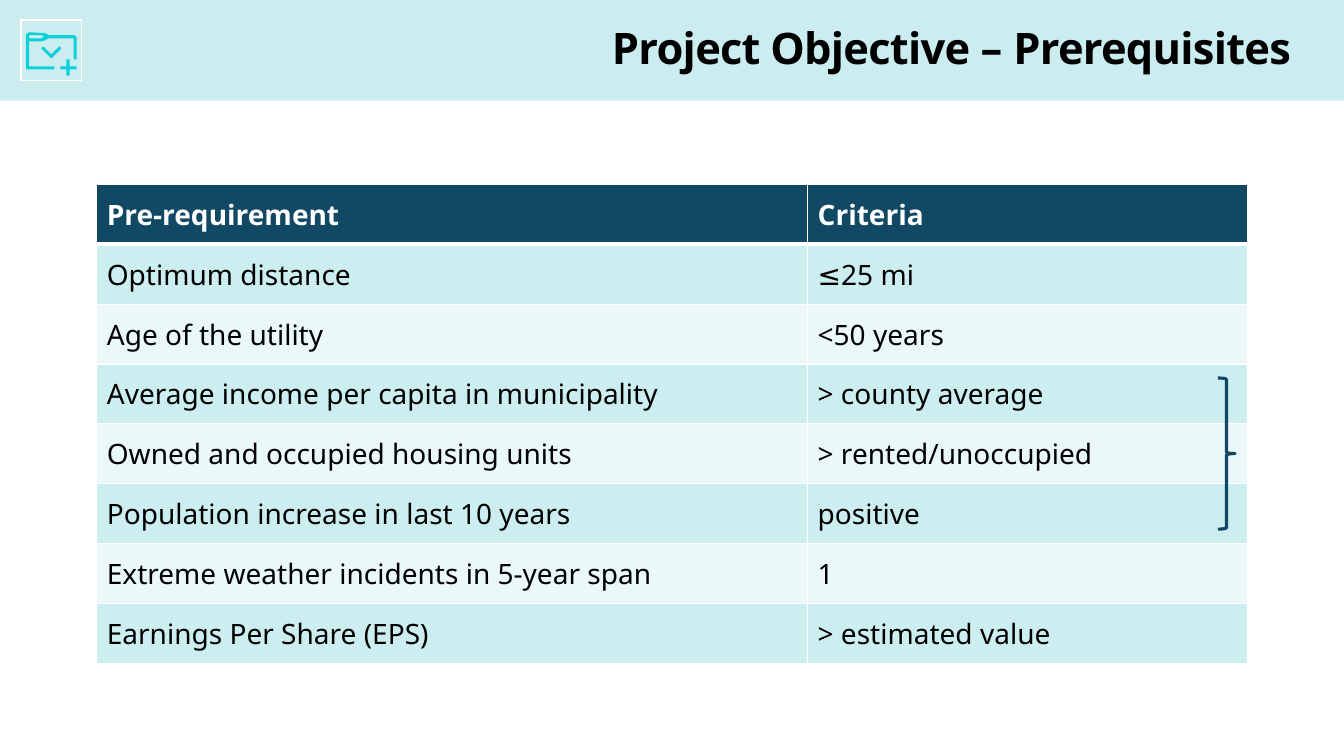
from dataclasses import dataclass

from lxml.etree import SubElement
from pptx import Presentation
from pptx.dml.color import RGBColor as RGB
from pptx.enum.shapes import MSO_SHAPE as SHAPE
from pptx.enum.text import MSO_ANCHOR as ANCHOR
from pptx.oxml.ns import qn
from pptx.util import Inches, Pt


@dataclass(frozen=True)
class Theme:
    font: str = "Noto Sans"
    band: str = "CCEDF0"
    icon: str = "0AD0D9"
    navy: str = "114864"
    row_dark: str = "CCEEF1"
    row_light: str = "EBF8F9"
    white: str = "FFFFFF"
    black: str = "000000"
    title_size: float = 31
    table_size: float = 20


THEME = Theme()

# Each title part has its own letter spacing, in hundredths of a point
TITLE = [("Project Objective ", -50), ("– ", -10), ("Prerequisites", -50)]

ROWS = [
    ("Pre-requirement", "Criteria"),
    ("Optimum distance", "≤25 mi"),
    ("Age of the utility", "<50 years"),
    ("Average income per capita in municipality", "> county average"),
    ("Owned and occupied housing units", "> rented/unoccupied"),
    ("Population increase in last 10 years", "positive"),
    ("Extreme weather incidents in 5-year span", "1"),
    ("Earnings Per Share (EPS)", "> estimated value"),
]
COLUMN_WIDTHS = (7.05, 4.36)

# Folder icon outlines, in hundredths of an inch
FOLDER = [(29, 32), (26, 34), (26, 69), (54, 69), (54, 66), (29, 66),
          (29, 41), (41, 41), (45, 40), (48, 38), (73, 38), (73, 59),
          (76, 59), (76, 37), (74, 35), (49, 35), (45, 33)]
TAB_HOLE = [(29, 35), (41, 35), (44, 36), (41, 38), (29, 38)]
CHEVRON = [(43, 46), (41, 48), (51, 58), (61, 48), (59, 46), (51, 54)]
PLUS = [(66, 59), (69, 59), (69, 66), (76, 66), (76, 69), (69, 69),
        (69, 75), (66, 75), (66, 69), (60, 69), (60, 66), (66, 66)]


def style_run(r, size, color, bold):
    values = {"name": THEME.font, "size": Pt(size), "bold": bold}
    for name, value in values.items():
        setattr(r.font, name, value)
    r.font.color.rgb = RGB.from_string(color)


def paint(sp, fill=None, line=None, width=1):
    sp.shadow.inherit = False
    if fill:
        sp.fill.solid()
        sp.fill.fore_color.rgb = RGB.from_string(fill)
    else:
        sp.fill.background()
    if line:
        sp.line.color.rgb = RGB.from_string(line)
        sp.line.width = Pt(width)
    else:
        sp.line.fill.background()


def add_preset(s, kind, box, **look):
    sp = s.shapes.add_shape(kind, *map(Inches, box))
    paint(sp, **look)


def add_outlines(s, outlines, **look):
    first, *others = outlines
    builder = s.shapes.build_freeform(*first[0], scale=Inches(0.01))
    builder.add_line_segments(first[1:], close=True)
    for points in others:
        builder.move_to(*points[0])
        builder.add_line_segments(points[1:], close=True)
    paint(builder.convert_to_shape(), **look)


def add_title(s, box):
    tf = s.shapes.add_textbox(*map(Inches, box)).text_frame
    format_values = {
        "word_wrap": True, "margin_left": 0, "margin_right": 0,
        "margin_top": Inches(0.01), "margin_bottom": 0,
    }
    for name, value in format_values.items():
        setattr(tf, name, value)
    p = tf.paragraphs[0]
    p.space_before = Pt(0.9)
    for text, spacing in TITLE:
        r = p.add_run()
        r.text = text
        style_run(r, THEME.title_size, THEME.black, True)
        r._r.get_or_add_rPr().set("spc", str(spacing))


def set_borders(cell, widths):
    tc_pr = cell._tc.get_or_add_tcPr()
    for side, width in widths.items():
        ln = SubElement(tc_pr, qn(f"a:ln{side}"), w=str(Pt(width)))
        fill = SubElement(ln, qn("a:solidFill"))
        SubElement(fill, qn("a:srgbClr"), val=THEME.white)


def fill_cell(cell, text, row):
    header = row == 0
    cell.vertical_anchor = ANCHOR.MIDDLE
    r = cell.text_frame.paragraphs[0].add_run()
    r.text = text
    color = THEME.white if header else THEME.black
    style_run(r, THEME.table_size, color, header)
    # A thick rule parts the header from the body
    set_borders(cell, {"L": 1, "R": 1, "T": 3 if row == 1 else 1,
                       "B": 3 if header else 1})
    body = THEME.row_dark if row % 2 else THEME.row_light
    cell.fill.solid()
    cell.fill.fore_color.rgb = RGB.from_string(THEME.navy if header else body)


def add_criteria_table(s, box):
    table = s.shapes.add_table(
        len(ROWS), len(COLUMN_WIDTHS), *map(Inches, box)).table
    for column, width in zip(table.columns, COLUMN_WIDTHS):
        column.width = Inches(width)
    for i, texts in enumerate(ROWS):
        for j, text in enumerate(texts):
            fill_cell(table.cell(i, j), text, i)


def main():
    prs = Presentation()
    prs.slide_width, prs.slide_height = Inches(13.33), Inches(7.5)
    s = prs.slides.add_slide(prs.slide_layouts[6])

    # Header band, title and icon
    add_preset(s, SHAPE.RECTANGLE, (0, 0, 13.33, 1), fill=THEME.band)
    add_title(s, (6.07, 0.2, 6.97, 0.54))
    add_outlines(s, [FOLDER, TAB_HOLE, CHEVRON, PLUS], fill=THEME.icon)
    add_preset(s, SHAPE.RECTANGLE, (0.21, 0.2, 0.6, 0.6),
               line=THEME.white, width=1.25)

    # Criteria table, with a brace around the municipal rows
    add_criteria_table(s, (0.96, 1.83, sum(COLUMN_WIDTHS), 4.75))
    add_preset(s, SHAPE.RIGHT_BRACE, (12.08, 3.75, 0.17, 1.5),
               line=THEME.navy, width=2.25)

    prs.save("out.pptx")


if __name__ == "__main__":
    main()
